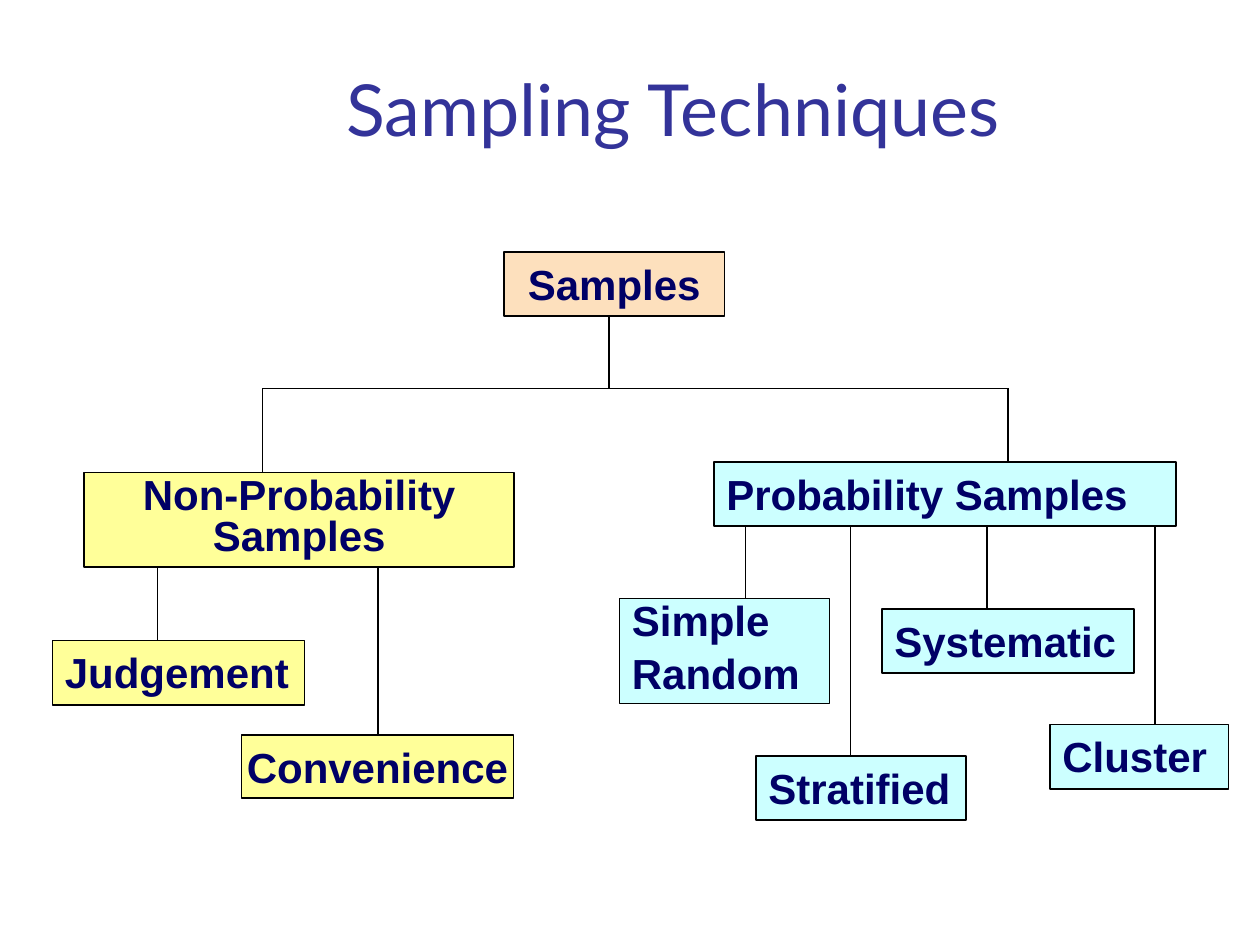
from lxml import etree
from pptx import Presentation
from pptx.dml.color import RGBColor
from pptx.enum.shapes import MSO_CONNECTOR, MSO_SHAPE
from pptx.enum.text import MSO_ANCHOR, PP_ALIGN
from pptx.oxml.ns import qn
from pptx.util import Pt

STRAIGHT = MSO_CONNECTOR.STRAIGHT
RECTANGLE = MSO_SHAPE.RECTANGLE
TOP, MIDDLE, BOTTOM = MSO_ANCHOR.TOP, MSO_ANCHOR.MIDDLE, MSO_ANCHOR.BOTTOM
LEFT, CENTER = PP_ALIGN.LEFT, PP_ALIGN.CENTER

BLACK = RGBColor(0x00, 0x00, 0x00)
NAVY = RGBColor(0x00, 0x00, 0x66)
INDIGO = RGBColor(0x33, 0x33, 0x99)
PEACH = RGBColor(0xFD, 0xE0, 0xBD)
YELLOW = RGBColor(0xFF, 0xFF, 0x99)
CYAN = RGBColor(0xCC, 0xFF, 0xFF)

ROW = 36.7  # height of a one-line box

deck = Presentation()
deck.slide_width, deck.slide_height = Pt(720), Pt(540)
slide = deck.slides.add_slide(deck.slide_layouts[5])

# Title
title = slide.shapes.title
title.left, title.top, title.width, title.height = Pt(78), Pt(30), Pt(613.5), Pt(60)
title.text_frame.text = "Sampling Techniques"
title.text_frame.vertical_anchor = BOTTOM
heading = title.text_frame.paragraphs[0]
heading.alignment = CENTER
heading.font.size = Pt(41)
heading.font.name = "Lato"
heading.font.color.rgb = INDIGO

# Tree branches: x1, y1, x2, y2
branches = [
    (348, 180, 348, 222),
    (150, 222, 576, 222),
    (150, 222, 150, 270),
    (576, 222, 576, 264),
    (90, 324, 90, 366),
    (216, 324, 216, 420),
    (426, 294, 426, 342),
    (486, 294, 486, 444),
    (564, 294, 564, 361),
    (660, 294, 660, 415),
]
for x1, y1, x2, y2 in branches:
    branch = slide.shapes.add_connector(STRAIGHT, Pt(x1), Pt(y1), Pt(x2), Pt(y2))
    branch.line.color.rgb = BLACK
    branch.line.width = Pt(1)
    etree.SubElement(branch.element.spPr, qn("a:effectLst"))

# Tree boxes: lines, left, top, width, height, fill, alignment, line spacings
boxes = [
    (["Samples"], 288, 144, 126, ROW, PEACH, CENTER, [1.0]),
    (["Non-Probability Samples"], 48, 270, 246, 54, YELLOW, CENTER, [0.8]),
    (["Judgement"], 30, 366, 144, ROW, YELLOW, LEFT, [1.0]),
    (["Convenience"], 138, 420, 155.5, 36, YELLOW, CENTER, [1.0]),
    (["Probability Samples"], 408, 264, 264, ROW, CYAN, LEFT, [1.0]),
    (["Simple", "Random"], 354, 342, 120, 60, CYAN, LEFT, [0.8, 0.5]),
    (["Systematic"], 504, 348, 144, ROW, CYAN, LEFT, [1.0]),
    (["Stratified"], 432, 432, 120, ROW, CYAN, LEFT, [1.0]),
    (["Cluster"], 600, 414, 102, ROW, CYAN, LEFT, [1.0]),
]
for lines, left, top, width, height, fill, alignment, spacings in boxes:
    box = slide.shapes.add_shape(RECTANGLE, Pt(left), Pt(top), Pt(width), Pt(height))
    box.shadow.inherit = False
    box.fill.solid()
    box.fill.fore_color.rgb = fill
    box.line.color.rgb = BLACK
    box.line.width = Pt(1)

    frame = box.text_frame
    frame.text = "\n".join(lines)
    # The widest label runs past its insets, so it stays on one line
    unwrapped = lines == ["Convenience"]
    frame.word_wrap = not unwrapped
    frame.vertical_anchor = MIDDLE if unwrapped else TOP
    for index, (para, spacing) in enumerate(zip(frame.paragraphs, spacings)):
        para.alignment = alignment
        para.line_spacing = spacing
        if index:
            para.space_before = Pt(14)
        para.font.size = Pt(24)
        para.font.name = "Arial"
        para.font.bold = True
        para.font.color.rgb = NAVY

deck.save("out.pptx")
